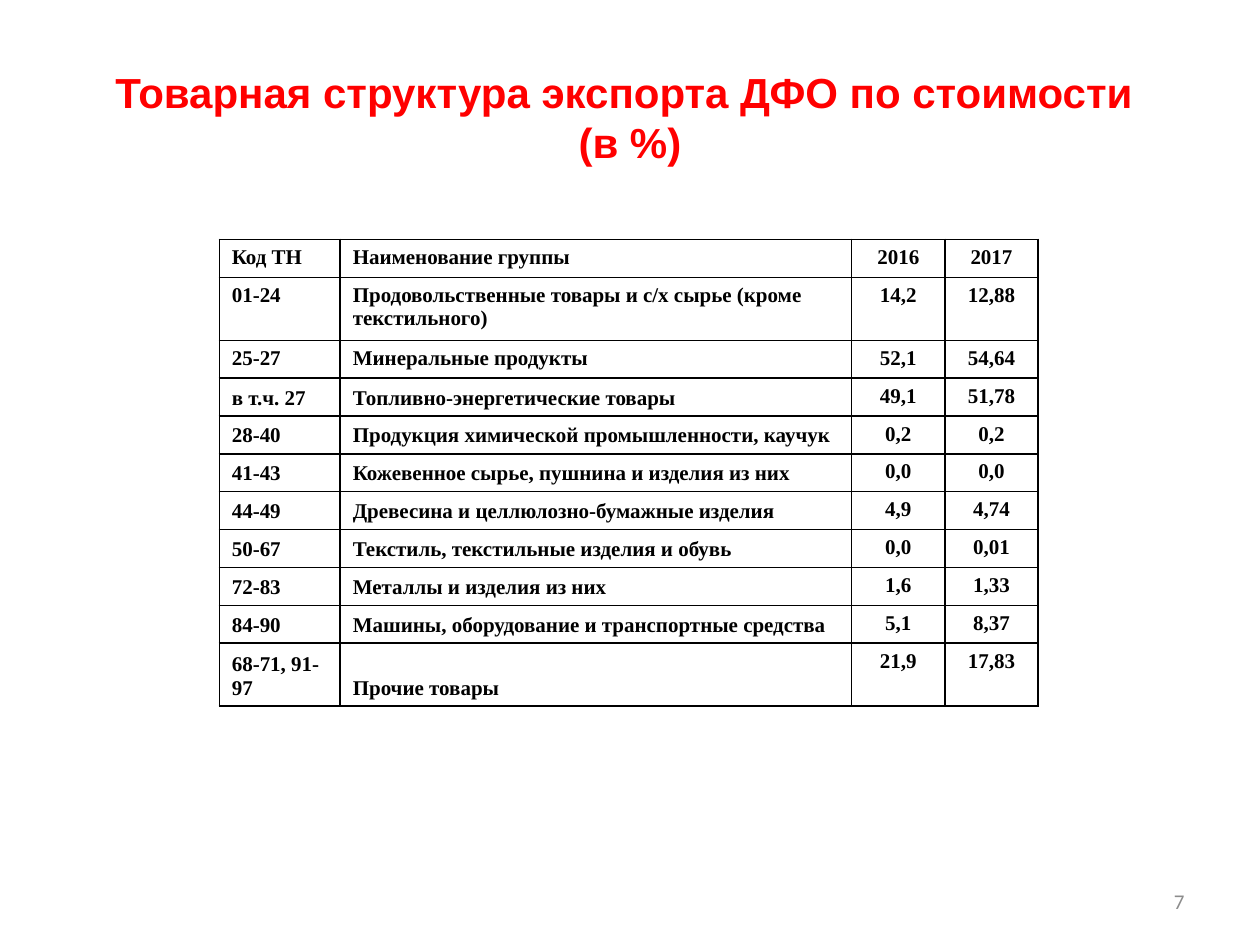
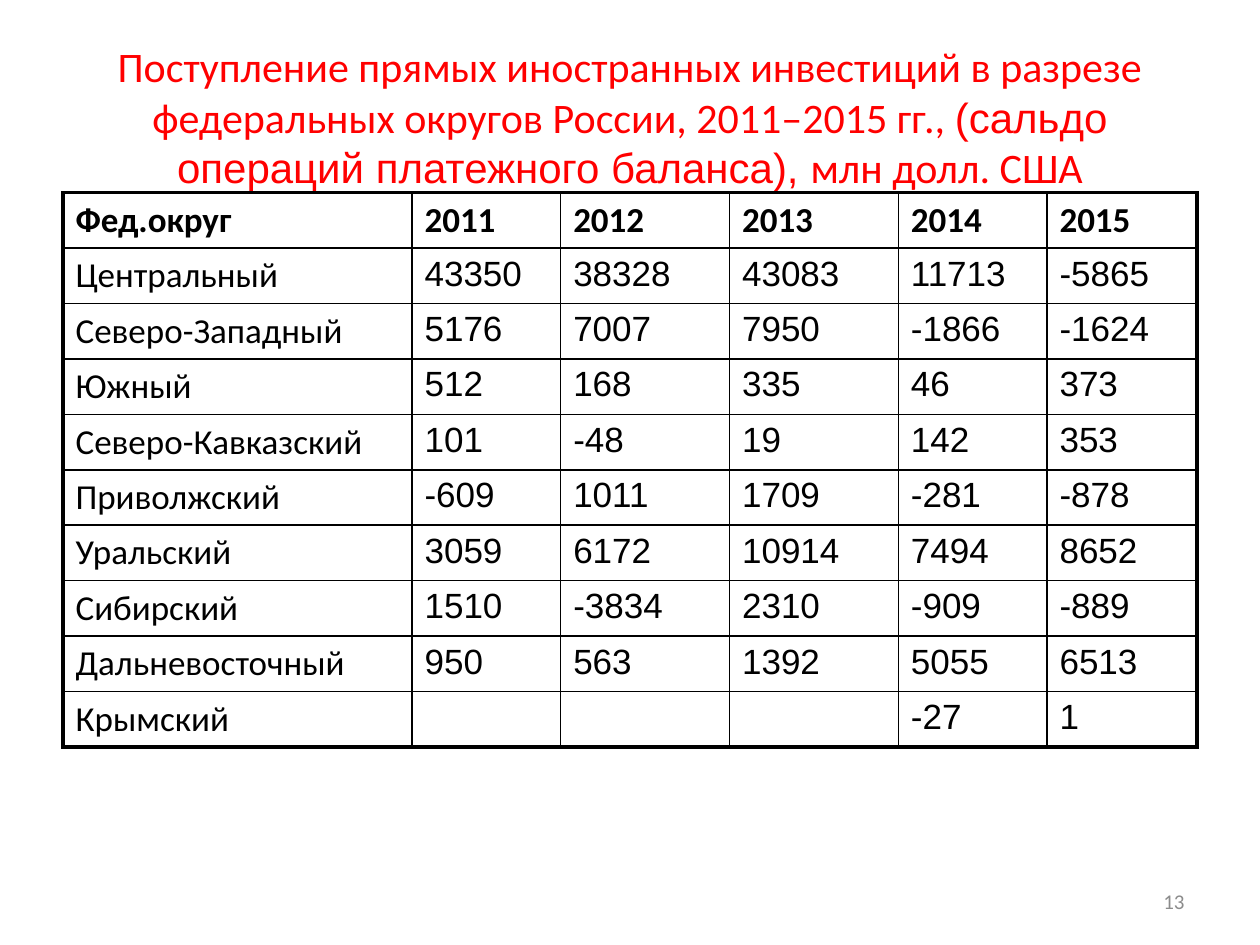
from lxml.etree import SubElement
from pptx import Presentation
from pptx.dml.color import RGBColor
from pptx.enum.text import MSO_ANCHOR, PP_ALIGN
from pptx.oxml.ns import qn
from pptx.util import Inches, Pt

RED = RGBColor(0xFF, 0, 0)
BLACK = RGBColor(0, 0, 0)
GRAY = RGBColor(0x8C, 0x8C, 0x8C)
THIN, THICK = 1, 2.25

EXPORT = [
    ("Код ТН", "Наименование группы", "2016", "2017"),
    ("01-24", "Продовольственные товары и с/х сырье (кроме текстильного)", "14,2", "12,88"),
    ("25-27", "Минеральные продукты", "52,1", "54,64"),
    ("в т.ч. 27", "Топливно-энергетические товары", "49,1", "51,78"),
    ("28-40", "Продукция химической промышленности, каучук", "0,2", "0,2"),
    ("41-43", "Кожевенное сырье, пушнина и изделия из них", "0,0", "0,0"),
    ("44-49", "Древесина и целлюлозно-бумажные изделия", "4,9", "4,74"),
    ("50-67", "Текстиль, текстильные изделия и обувь", "0,0", "0,01"),
    ("72-83", "Металлы и изделия из них", "1,6", "1,33"),
    ("84-90", "Машины, оборудование и транспортные средства", "5,1", "8,37"),
    ("68-71, 91-97", "Прочие товары", "21,9", "17,83"),
]
INVEST = [
    ("Фед.округ", "2011", "2012", "2013", "2014", "2015"),
    ("Центральный", "43350", "38328", "43083", "11713", "-5865"),
    ("Северо-Западный", "5176", "7007", "7950", "-1866", "-1624"),
    ("Южный", "512", "168", "335", "46", "373"),
    ("Северо-Кавказский", "101", "-48", "19", "142", "353"),
    ("Приволжский", "-609", "1011", "1709", "-281", "-878"),
    ("Уральский", "3059", "6172", "10914", "7494", "8652"),
    ("Сибирский", "1510", "-3834", "2310", "-909", "-889"),
    ("Дальневосточный", "950", "563", "1392", "5055", "6513"),
    ("Крымский", "", "", "", "-27", "1"),
]
PAGES = [
    dict(
        num="7", bold=True, rows=EXPORT, left=1.74, top=1.9, edge=THIN,
        title=[("Товарная структура экспорта ДФО по стоимости \v(в %)", "Arial")],
        widths=[0.96, 4.06, 0.74, 0.74],
        heights=[0.3, 0.5] + [0.3] * 8 + [0.5],
    ),
    dict(
        num="13", bold=False, rows=INVEST, left=0.5, top=1.53, edge=THICK,
        title=[
            ("Поступление прямых иностранных инвестиций в разрезе "
             "федеральных округов России, 2011–2015 гг., ", "Calibri"),
            ("(сальдо операций платежного баланса), ", "Arial"),
            ("млн долл. США", "Calibri"),
        ],
        widths=[2.77, 1.18, 1.34, 1.34, 1.18, 1.19],
        heights=[0.44] * 10,
    ),
]


def add_text(slide, box, parts, size, color, bold, align):
    """Add a middle-anchored text box of one paragraph; parts are (text, font)."""
    frame = slide.shapes.add_textbox(*map(Inches, box)).text_frame
    frame.word_wrap = True
    frame.vertical_anchor = MSO_ANCHOR.MIDDLE
    para = frame.paragraphs[0]
    para.text = parts[0][0]
    for text, _ in parts[1:]:
        para.add_run().text = text
    para.alignment = align
    names = [name for _, name in parts]
    for i, run in enumerate(para.runs):
        font = run.font
        font.name = names[min(i, len(names) - 1)]
        font.size, font.bold = Pt(size), bold
        font.color.rgb = color


def set_edges(cell, widths):
    """Draw black cell borders; widths are left, right, top, bottom in points."""
    props = cell._tc.get_or_add_tcPr()
    for i, (side, width) in enumerate(zip("LRTB", widths)):
        line = SubElement(props, qn(f"a:ln{side}"), w=str(Pt(width)))
        fill = SubElement(line, qn("a:solidFill"))
        SubElement(fill, qn("a:srgbClr"), val=str(BLACK))
        props.insert(i, line)


deck = Presentation()
deck.slide_width, deck.slide_height = Inches(10), Inches(7.5)

for page in PAGES:
    slide = deck.slides.add_slide(deck.slide_layouts[6])
    add_text(slide, (0.5, 0.3, 9, 1.25), page["title"], 24, RED, page["bold"], PP_ALIGN.CENTER)
    add_text(slide, (7.17, 6.95, 2.33, 0.4), [(page["num"], "Calibri")], 12, GRAY, False, PP_ALIGN.RIGHT)

    rows, widths, heights, edge = (page[key] for key in ("rows", "widths", "heights", "edge"))
    box = page["left"], page["top"], sum(widths), sum(heights)
    table = slide.shapes.add_table(len(rows), len(widths), *map(Inches, box)).table
    table.first_row = table.horz_banding = False
    for col, width in zip(table.columns, widths):
        col.width = Inches(width)
    for row, height in zip(table.rows, heights):
        row.height = Inches(height)

    for r, row in enumerate(rows):
        for c, text in enumerate(row):
            cell = table.cell(r, c)
            cell.fill.background()
            ends = (c == 0, c == len(row) - 1, r == 0, r == len(rows) - 1)
            set_edges(cell, [edge if end else THIN for end in ends])
            para = cell.text_frame.paragraphs[0]
            para.text = text
            font = para.runs[0].font if text else para.font
            font.color.rgb = BLACK
            if rows is EXPORT:
                font.name, font.size, font.bold = "Times New Roman", Pt(12), True
                if c > 1:
                    para.alignment = PP_ALIGN.CENTER
                elif r > 2:
                    cell.vertical_anchor = MSO_ANCHOR.BOTTOM
            else:
                font.name = "Calibri" if r == 0 or c == 0 else "Arial"
                font.size, font.bold = Pt(20), r == 0
                para.space_before = Pt(4)

deck.save("out.pptx")
